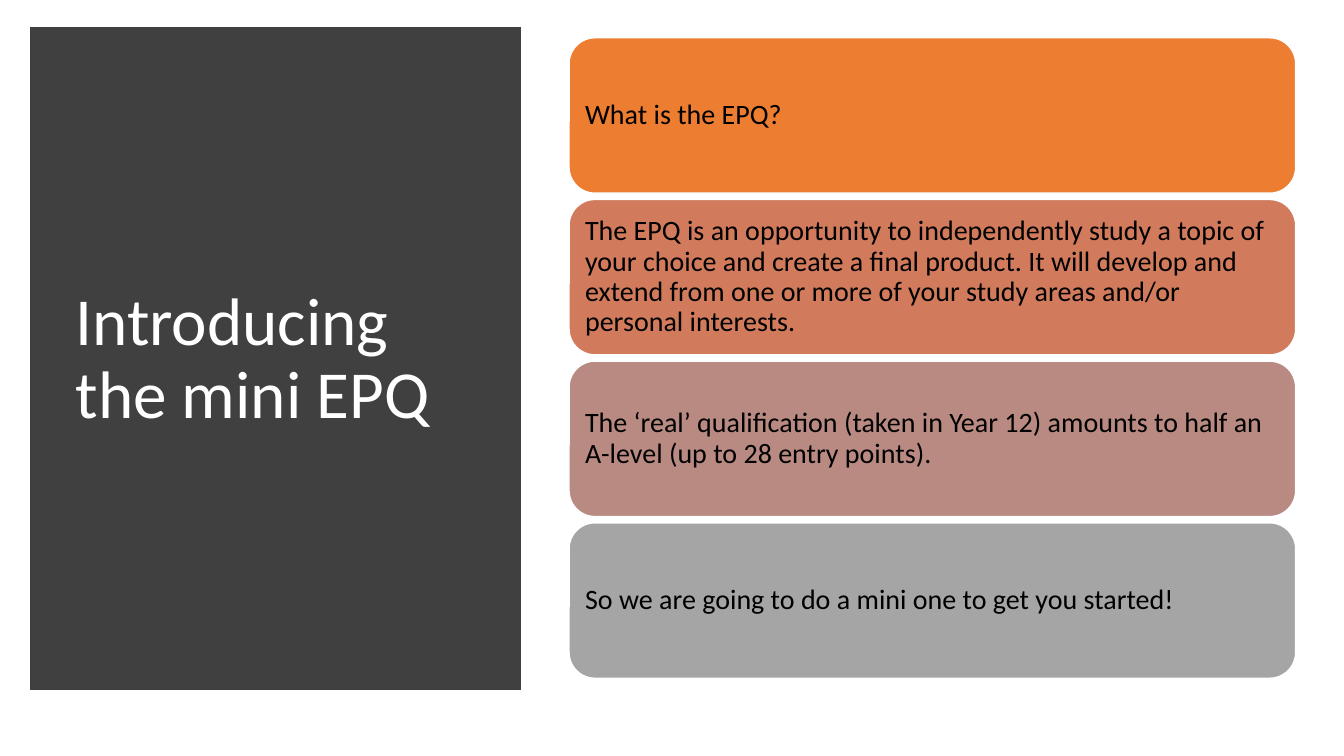
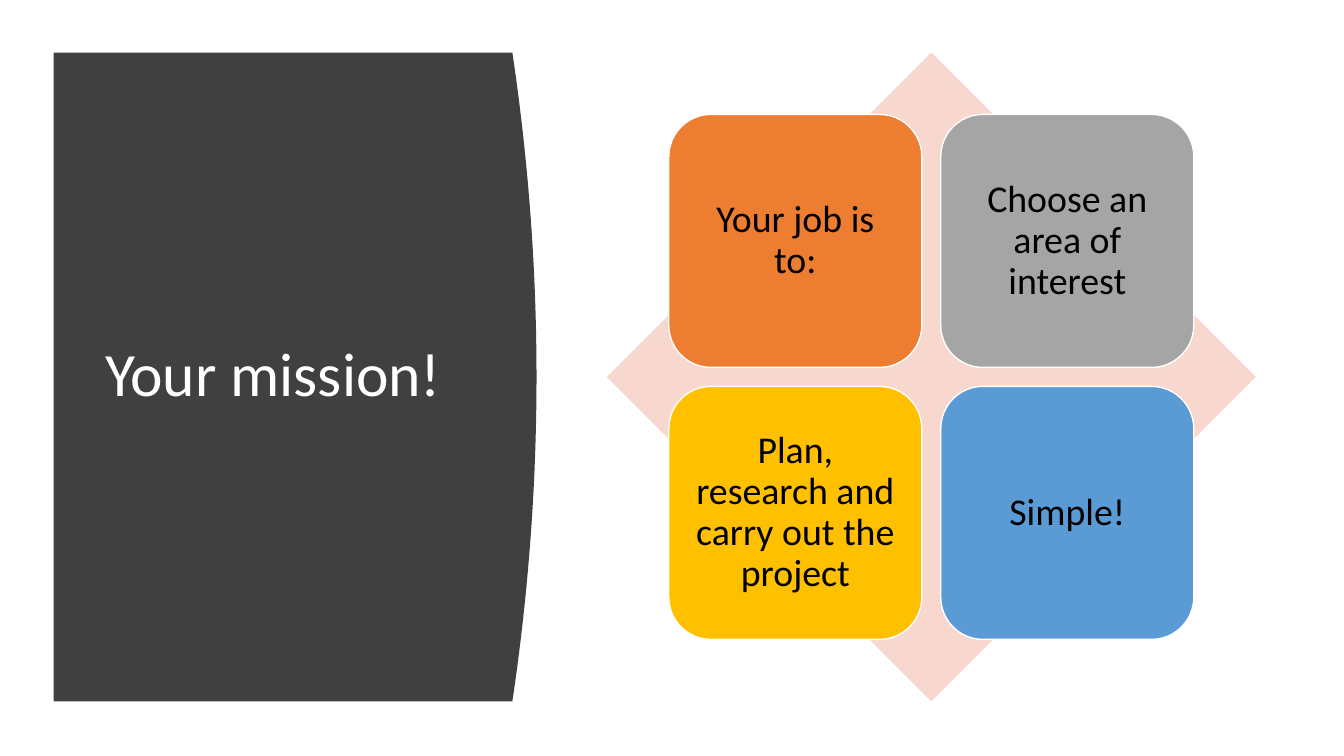
from lxml.etree import SubElement as Sub
from pptx import Presentation
from pptx.dml.color import RGBColor as Rgb
from pptx.enum.shapes import MSO_SHAPE as Kind
from pptx.enum.text import MSO_ANCHOR as Anchor, PP_ALIGN as Align
from pptx.oxml.ns import qn
from pptx.util import Pt

PX = 9525  # EMU in one px, 96 px to the inch
WIDE, HIGH = 1280, 720

HUES = {
    "dark": "404040", "white": "FFFFFF", "black": "000000",
    "orange": "ED7D31", "rust": "D17B5C", "rose": "B98A82",
    "grey": "A5A5A5", "gold": "FFC000", "blue": "5B9BD5",
    "blush": "F8D7CE",
}

# Formats: frame and paragraph values shared by all text of one kind
TITLE = {
    "frame": {"margin_left": 10, "margin_right": 10,
              "margin_top": 5, "margin_bottom": 5},
    "align": Align.LEFT, "hue": "white",
}
SIDES = ("margin_left", "margin_right", "margin_top", "margin_bottom")
ROW = {"frame": dict.fromkeys(SIDES, 8),
       "align": Align.LEFT, "hue": "black"}
CARD = {"frame": dict.fromkeys(SIDES, 11),
        "align": Align.CENTER, "hue": "black"}

ROWS = [
    ("orange", "What is the EPQ?"),
    ("rust", "The EPQ is an opportunity to independently study a topic of "
             "your choice and create a final product. It will develop and "
             "extend from one or more of your study areas and/or personal "
             "interests."),
    ("rose", "The ‘real’ qualification (taken in Year 12) amounts to half an "
             "A-level (up to 28 entry points)."),
    ("grey", "So we are going to do a mini one to get you started!"),
]
CARDS = [
    ("orange", "Your job is to:"),
    ("grey", "Choose an area of interest"),
    ("gold", "Plan, research and carry out the project"),
    ("blue", "Simple!"),
]


def tint(name):
    return Rgb.from_string(HUES[name])


def emu(*spans):
    return [span * PX for span in spans]


def paint(shape, fill, line=None, width=1):
    """Give a shape a flat fill and an optional sharp-cornered outline."""
    shape.shadow.inherit = False
    shape.fill.solid()
    shape.fill.fore_color.rgb = tint(fill)
    if line:
        shape.line.color.rgb = tint(line)
        shape.line.width = Pt(width)
        edge = shape.element.spPr.find(qn("a:ln"))
        Sub(edge, qn("a:miter"), lim="800000")
    else:
        shape.line.fill.background()


def block(slide, kind, box, fill, line=None, width=1):
    shape = slide.shapes.add_shape(kind, *emu(*box))
    paint(shape, fill, line, width)
    return shape


def write(shape, words, size, style):
    """Put one centred-in-height paragraph into a shape."""
    frame = shape.text_frame
    frame.word_wrap = True
    frame.vertical_anchor = Anchor.MIDDLE
    for name, value in style["frame"].items():
        setattr(frame, name, value * PX)
    para = frame.paragraphs[0]
    para.alignment = style["align"]
    para.line_spacing = 0.9
    run = para.add_run()
    run.text = words
    for name, value in {"name": "Calibri", "size": Pt(size)}.items():
        setattr(run.font, name, value)
    run.font.color.rgb = tint(style["hue"])


def title(slide, box, words, size):
    write(slide.shapes.add_textbox(*emu(*box)), words, size, TITLE)


def tile(slide, box, hue, words, size, style):
    """Draw a rounded box with its text."""
    shape = block(slide, Kind.ROUNDED_RECTANGLE, box, hue, "white")
    write(shape, words, size, style)


def bulge(slide, left, top, side, high, depth, steps=40):
    """Draw a dark panel whose right side bows out as a parabola."""
    curve = []
    for step in range(steps + 1):
        part = step / steps
        curve.append((round((side + 4 * depth * part * (1 - part)) * PX),
                      round((top + high * part) * PX)))
    pen = slide.shapes.build_freeform(left * PX, top * PX)
    pen.add_line_segments(curve + [(left * PX, (top + high) * PX)])
    paint(pen.convert_to_shape(), "dark")


def intro(slide):
    # Dark panel and title
    block(slide, Kind.RECTANGLE, (35, 32, 455, 619), "dark", "dark", 10)
    title(slide, (62, 67, 399, 552), "Introducing the mini EPQ", 48)
    # Stack of rows
    high, gap = 148, 6
    for i, (hue, words) in enumerate(ROWS):
        box = (542, 36 + i * (high + gap), 692, high)
        tile(slide, box, hue, words, 20, ROW)


def mission(slide):
    # Bowed panel and title
    bulge(slide, 51, 50, 488, 618, 23)
    title(slide, (90, 107, 359, 503), "Your mission!", 44)
    # Two by two cards on a diamond
    block(slide, Kind.DIAMOND, (578, 50, 618, 618), "blush")
    side, gap = 241, 18
    for i, (hue, words) in enumerate(CARDS):
        row, col = divmod(i, 2)
        box = (637 + col * (side + gap), 109 + row * (side + gap), side, side)
        tile(slide, box, hue, words, 27, CARD)


def main():
    deck = Presentation()
    deck.slide_width, deck.slide_height = emu(WIDE, HIGH)
    blank = deck.slide_layouts[6]
    for fill in (intro, mission):
        fill(deck.slides.add_slide(blank))
    deck.save("out.pptx")


if __name__ == "__main__":
    main()
